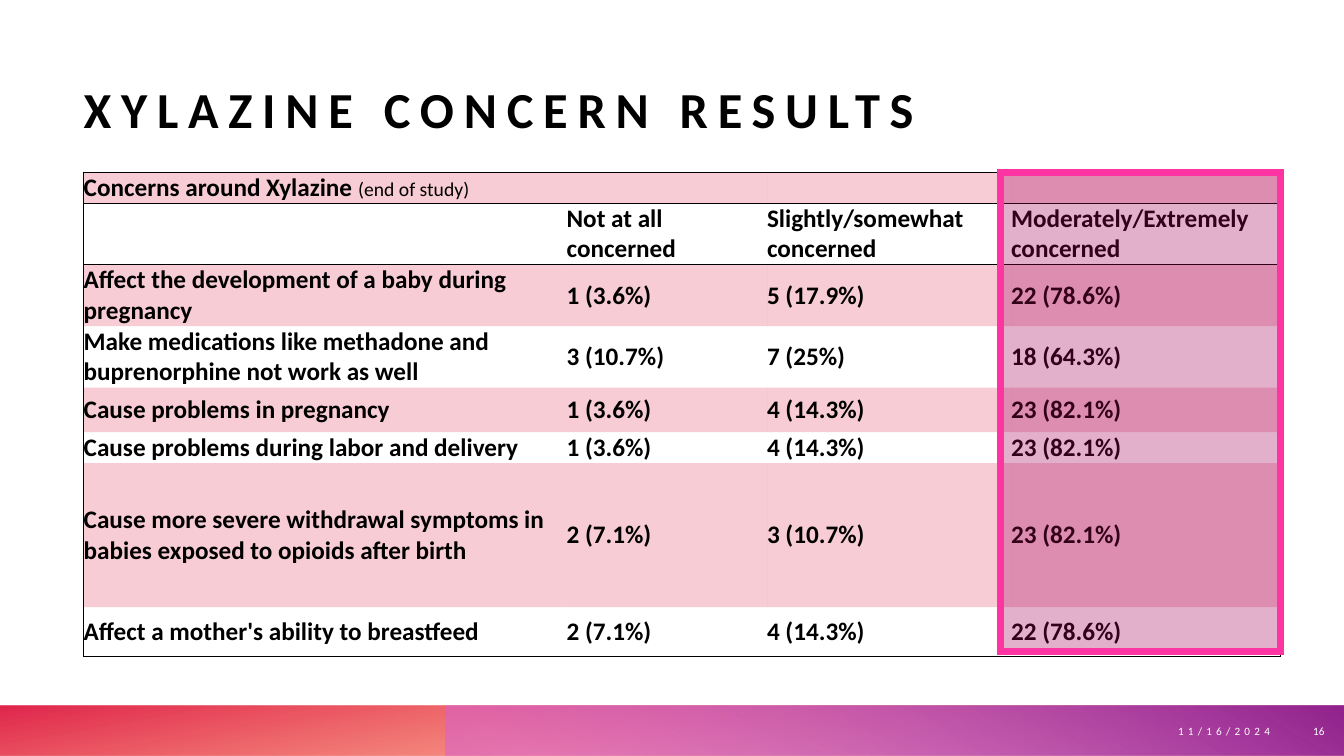
from lxml import etree
from pptx import Presentation
from pptx import util as u
from pptx.dml.color import RGBColor
from pptx.enum import shapes, text
from pptx.oxml.ns import qn


def colour(value):
    return RGBColor.from_string(value)


class SlideBuilder:
    font = "Calibri"
    black = "000000"
    red = "DA002F"
    plain_table_style = "{2D5ABB26-0587-4C30-8999-92F81FD0307C}"

    def __init__(self, slide):
        self.slide = slide

    def solid(self, fill, value, opacity):
        fill.solid()
        fill.fore_color.rgb = colour(value)
        node = fill._xPr.find(qn("a:solidFill"))[0]
        etree.SubElement(node, qn("a:alpha"), val=str(opacity * 1000))

    def rectangle(self, left, top, width, height):
        shape = self.slide.shapes.add_shape(
            shapes.MSO_SHAPE.RECTANGLE, u.Cm(left), u.Cm(top), u.Cm(width), u.Cm(height))
        shape.shadow.inherit = False
        return shape

    def gradient_band(self, left, width, stops, angle, flip):
        """Draw a footer band; stops are (position, colour, opacity)."""
        shape = self.rectangle(left, 17.78, width, 1.27)
        shape.line.fill.background()
        shape.fill.gradient()
        shape.fill.gradient_angle = 0
        gradient = shape._element.spPr.find(qn("a:gradFill"))
        stop_list = gradient.find(qn("a:gsLst"))
        for old_stop in list(stop_list):
            stop_list.remove(old_stop)
        for position, value, opacity in stops:
            stop = etree.SubElement(stop_list, qn("a:gs"), pos=str(position * 1000))
            node = etree.SubElement(stop, qn("a:srgbClr"), val=value)
            etree.SubElement(node, qn("a:alpha"), val=str(opacity * 1000))
        line = gradient.find(qn("a:lin"))
        line.set("ang", str(angle * 60000))
        line.set("scaled", "0")
        shape._element.spPr.find(qn("a:xfrm")).set(flip, "1")

    def highlight(self, left, top, width, height):
        shape = self.rectangle(left, top, width, height)
        self.solid(shape.fill, "A6025C", 31)
        shape.line.color.rgb = colour("FD34A2")
        shape.line.width = u.Pt(5)
        outline = shape._element.spPr.find(qn("a:ln"))
        etree.SubElement(outline, qn("a:miter"), lim="800000")

    def label(self, words, left, top, width, height, size, value, bold=False,
              spacing=0, align=text.PP_ALIGN.RIGHT, anchor=text.MSO_ANCHOR.MIDDLE, inset=0.25):
        box = self.slide.shapes.add_textbox(u.Cm(left), u.Cm(top), u.Cm(width), u.Cm(height))
        frame = box.text_frame
        frame.word_wrap = True
        frame.vertical_anchor = anchor
        frame.margin_left = frame.margin_right = u.Cm(inset)
        frame.margin_top = frame.margin_bottom = u.Cm(inset / 2)
        paragraph = frame.paragraphs[0]
        paragraph.alignment = align
        self.style(paragraph.font, size, value, bold)
        run = paragraph.add_run()
        run.text = words
        if spacing:
            run.font._element.set("spc", str(spacing * 100))

    def style(self, font, size, value, bold):
        font.name = self.font
        font.size = u.Pt(size)
        font.bold = bold
        font.color.rgb = colour(value)

    def border(self, cell, sides):
        properties = cell._tc.get_or_add_tcPr()
        for side in "LRTB":
            if side in sides:
                line = etree.SubElement(properties, qn("a:ln" + side), w=str(u.Pt(1)))
                fill = etree.SubElement(line, qn("a:solidFill"))
                etree.SubElement(fill, qn("a:srgbClr"), val=self.black)

    def table(self, left, top, widths, heights, rows):
        frame = self.slide.shapes.add_table(
            len(rows), len(widths), u.Cm(left), u.Cm(top), u.Cm(sum(widths)), u.Cm(sum(heights)))
        table = frame.table
        table.first_row = table.horz_banding = False
        table._tbl.tblPr.find(qn("a:tableStyleId")).text = self.plain_table_style
        for column, width in zip(table.columns, widths):
            column.width = u.Cm(width)
        for row, height in zip(table.rows, heights):
            row.height = u.Cm(height)
        last_row, last_column = len(rows) - 1, len(widths) - 1
        for r, values in enumerate(rows):
            for c, value in enumerate(values):
                cell = table.cell(r, c)
                sides = "L" * (c == 0) + "R" * (c == last_column)
                sides += "T" * (r < 2) + "B" * (r in (0, 1, last_row))
                self.border(cell, sides)
                if r % 2 == 0:
                    self.solid(cell.fill, self.red, 20)
                else:
                    cell.fill.background()
                self.fill_cell(cell, value)

    def fill_cell(self, cell, value):
        cell.margin_left = cell.margin_right = cell.margin_top = cell.margin_bottom = 0
        cell.vertical_anchor = text.MSO_ANCHOR.MIDDLE
        paragraph = cell.text_frame.paragraphs[0]
        if isinstance(value, str):
            self.style(paragraph.font, 18, self.black, True)
            if value:
                paragraph.add_run().text = value
            return
        for words, size, bold in value:
            run = paragraph.add_run()
            run.text = words
            self.style(run.font, size, self.black, bold)


def main():
    presentation = Presentation()
    presentation.slide_width = u.Cm(33.87)
    presentation.slide_height = u.Cm(19.05)
    builder = SlideBuilder(presentation.slides.add_slide(presentation.slide_layouts[6]))

    # Footer bands
    builder.gradient_band(0, 33.87, [(14, "FE4A00", 28), (100, "DA002F", 85)], 100, "flipV")
    builder.gradient_band(11.22, 22.65, [(9, "D861D4", 55), (99, "92248E", 100)], 240, "flipH")

    # Title
    builder.label("XYLAZINE CONCERN RESULTS", 2.11, 1.04, 28.45, 2.46, 36, builder.black,
                  bold=True, spacing=7, align=text.PP_ALIGN.LEFT,
                  anchor=text.MSO_ANCHOR.BOTTOM, inset=0)

    # Table of concerns
    heading = [("Concerns around Xylazine ", 18, True), ("(end of study)", 14, False)]
    rows = [
        [heading, "", "", ""],
        ["", "Not at all concerned", "Slightly/somewhat concerned",
         "Moderately/Extremely concerned"],
        ["Affect the development of a baby during pregnancy",
         "1 (3.6%)", "5 (17.9%)", "22 (78.6%)"],
        ["Make medications like methadone and buprenorphine not work as well",
         "3 (10.7%)", "7 (25%)", "18 (64.3%)"],
        ["Cause problems in pregnancy", "1 (3.6%)", "4 (14.3%)", "23 (82.1%)"],
        ["Cause problems during labor and delivery", "1 (3.6%)", "4 (14.3%)", "23 (82.1%)"],
        ["Cause more severe withdrawal symptoms in babies exposed to opioids after birth",
         "2 (7.1%)", "3 (10.7%)", "23 (82.1%)"],
        ["Affect a mother's ability to breastfeed", "2 (7.1%)", "4 (14.3%)", "22 (78.6%)"],
    ]
    builder.table(2.11, 4.34, [12.17, 5.05, 6.15, 6.78],
                  [0.78, 1.55, 1.55, 1.55, 1.12, 0.78, 3.63, 1.24], rows)

    # Date and slide number
    builder.label("11/16/2024", 21.97, 17.81, 10.29, 1.24, 8, "FFFFFF", spacing=3)
    builder.label("16", 32.41, 17.81, 1.22, 1.24, 8, "FFFFFF")

    # Highlighted column
    builder.highlight(25.22, 4.34, 7.04, 12.07)

    presentation.save("out.pptx")


if __name__ == "__main__":
    main()
